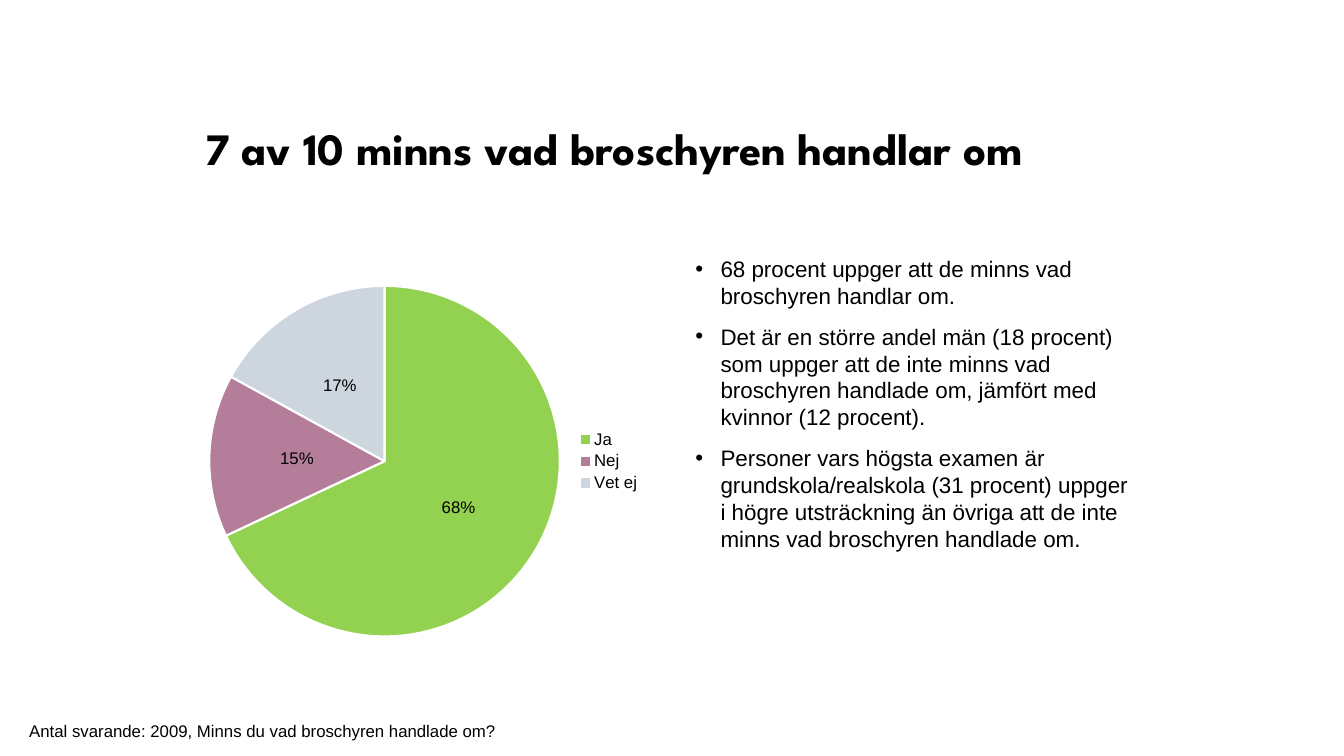
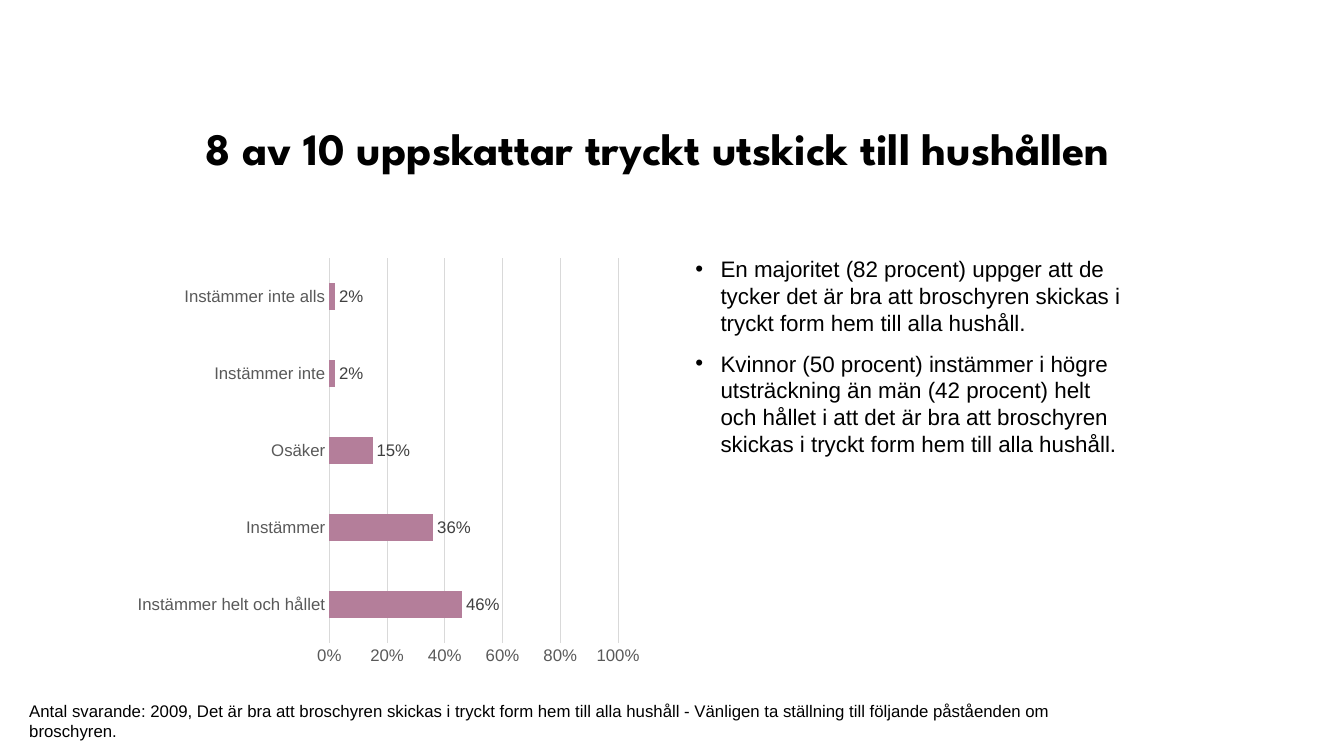
from lxml.etree import SubElement
from pptx import Presentation
from pptx.chart.data import CategoryChartData
from pptx.dml.color import RGBColor
from pptx.enum.chart import XL_CHART_TYPE, XL_LABEL_POSITION, XL_LEGEND_POSITION, XL_TICK_MARK
from pptx.enum.text import MSO_ANCHOR, MSO_AUTO_SIZE
from pptx.oxml import parse_xml
from pptx.oxml.ns import nsdecls, qn
from pptx.util import Pt

TITLE_FONT, BODY_FONT = "League Spartan", "Arial"
BLACK, WHITE, GREEN, MAUVE, PALE = "000000", "FFFFFF", "93D150", "B47E9A", "CDD5DE"
AXIS_GREY, LABEL_GREY, GRID_GREY = "595959", "404040", "D9D9D9"

# Boxes: left, top, width, height in points
TITLE_BOX = (139.7, 87.1, 675.4, 76.3)
BODY_BOX = (489.6, 178.6, 325.4, 301.7)
PIE_BOX = (139.7, 178.6, 325.4, 301.7)
BAR_BOX = (91.4, 178.6, 373.7, 301.7)
FOOTER_LEFT, FOOTER_BOTTOM, FOOTER_LINE = 20.9, 529, 14.4


def color(value):
    return RGBColor.from_string(value)


def style_font(font, size, value=BLACK, name=BODY_FONT, bold=False):
    font.name, font.size, font.bold = name, Pt(size), bold
    font.color.rgb = color(value)


def add_text(slide, box, paragraphs, size, name=BODY_FONT, bold=False):
    shape = slide.shapes.add_textbox(*map(Pt, box))
    text_frame = shape.text_frame
    text_frame.word_wrap = True
    text_frame.vertical_anchor = MSO_ANCHOR.TOP
    text_frame.text = "\n".join(paragraphs)
    for paragraph in text_frame.paragraphs:
        for run in paragraph.runs:
            style_font(run.font, size, BLACK, name, bold)
    return text_frame


def add_title(slide, box, title):
    text_frame = add_text(slide, box, [title], 32, TITLE_FONT, True)
    text_frame.paragraphs[0].line_spacing = 0.9


def add_bullets(slide, box, bullets):
    text_frame = add_text(slide, box, bullets, 16)
    for index, paragraph in enumerate(text_frame.paragraphs):
        paragraph.line_spacing = Pt(19.2)
        paragraph.space_before = Pt(10 if index else 0)
        properties = paragraph._p.get_or_add_pPr()
        properties.set("marL", str(Pt(18)))
        properties.set("indent", str(-Pt(18)))
        SubElement(properties, qn("a:buFont")).set("typeface", BODY_FONT)
        SubElement(properties, qn("a:buChar")).set("char", "•")


def add_footer(slide, width, note, lines):
    height = lines * FOOTER_LINE
    box = (FOOTER_LEFT, FOOTER_BOTTOM - height, width, height)
    text_frame = add_text(slide, box, [note], 12)
    text_frame.margin_left = text_frame.margin_right = 0
    text_frame.margin_top = text_frame.margin_bottom = 0
    text_frame.auto_size = MSO_AUTO_SIZE.SHAPE_TO_FIT_TEXT


def add_chart(slide, box, kind, values, plot_box, label_position, label_color):
    """Add a one-series percent chart; plot_box holds fractions of the chart box."""
    data = CategoryChartData(number_format="0%")
    data.categories = list(values)
    data.add_series("Series 1", list(values.values()))
    chart = slide.shapes.add_chart(kind, *map(Pt, box), data).chart
    chart.has_title = chart.has_legend = False
    style_font(chart.font, 10)

    # Plot area
    plot_area = chart._chartSpace.chart.plotArea
    for layout in plot_area.findall(qn("c:layout")):
        plot_area.remove(layout)
    sizes = "".join(f'<c:{key} val="{part}"/>' for key, part in zip("xywh", plot_box))
    plot_area.insert(0, parse_xml(
        f'<c:layout {nsdecls("c")}><c:manualLayout><c:layoutTarget val="inner"/>'
        f'<c:xMode val="edge"/><c:yMode val="edge"/>{sizes}</c:manualLayout></c:layout>'))

    # Data labels
    plot = chart.plots[0]
    plot.has_data_labels = True
    labels = plot.data_labels
    labels.show_value, labels.show_percentage = True, False
    labels.number_format, labels.number_format_is_linked = "0%", False
    labels.position = label_position
    style_font(labels.font, 12, label_color)
    return chart


def add_pie(slide, box, values, colors):
    chart = add_chart(slide, box, XL_CHART_TYPE.PIE, values, (0.03, 0.085, 0.77, 0.83),
                      XL_LABEL_POSITION.CENTER, BLACK)
    for index, value in enumerate(colors):
        piece = chart.plots[0].series[0].points[index].format
        piece.fill.solid()
        piece.fill.fore_color.rgb = color(value)
        piece.line.color.rgb = color(WHITE)
        piece.line.width = Pt(1.5)
    chart.has_legend = True
    chart.legend.position = XL_LEGEND_POSITION.RIGHT
    chart.legend.include_in_layout = False
    style_font(chart.legend.font, 12)


def add_bars(slide, box, values):
    chart = add_chart(slide, box, XL_CHART_TYPE.BAR_CLUSTERED, values,
                      (0.385, 0.02, 0.552, 0.91), XL_LABEL_POSITION.OUTSIDE_END, LABEL_GREY)
    plot = chart.plots[0]
    plot.gap_width, plot.vary_by_categories = 182, False
    fill = plot.series[0].format.fill
    fill.solid()
    fill.fore_color.rgb = color(MAUVE)

    # Axes
    category_axis, value_axis = chart.category_axis, chart.value_axis
    for axis in (category_axis, value_axis):
        axis.major_tick_mark = axis.minor_tick_mark = XL_TICK_MARK.NONE
        style_font(axis.tick_labels.font, 12, AXIS_GREY)
    value_axis.minimum_scale, value_axis.maximum_scale, value_axis.major_unit = 0, 1, 0.2
    value_axis.tick_labels.number_format = "0%"
    value_axis.tick_labels.number_format_is_linked = False
    value_axis.format.line.fill.background()
    value_axis.has_major_gridlines = True
    category_axis.has_major_gridlines = False
    for line in (category_axis.format.line, value_axis.major_gridlines.format.line):
        line.color.rgb = color(GRID_GREY)
        line.width = Pt(0.75)


def add_result_slide(presentation, title, bullets):
    slide = presentation.slides.add_slide(presentation.slide_layouts[6])
    add_title(slide, TITLE_BOX, title)
    add_bullets(slide, BODY_BOX, bullets)
    return slide


def main():
    presentation = Presentation()
    presentation.slide_width, presentation.slide_height = Pt(960), Pt(540)

    # Recall of the brochure
    slide = add_result_slide(presentation, "7 av 10 minns vad broschyren handlar om", [
        "68 procent uppger att de minns vad broschyren handlar om.",
        "Det är en större andel män (18 procent) som uppger att de inte minns vad "
        "broschyren handlade om, jämfört med kvinnor (12 procent).",
        "Personer vars högsta examen är grundskola/realskola (31 procent) uppger i högre "
        "utsträckning än övriga att de inte minns vad broschyren handlade om.",
    ])
    add_pie(slide, PIE_BOX, {"Ja": 0.68, "Nej": 0.15, "Vet ej": 0.17}, (GREEN, MAUVE, PALE))
    add_footer(slide, 795, "Antal svarande: 2009, Minns du vad broschyren handlade om?", 1)

    # Opinion of the printed mailing
    slide = add_result_slide(presentation, "8 av 10 uppskattar tryckt utskick till hushållen", [
        "En majoritet (82 procent) uppger att de tycker det är bra att broschyren skickas i "
        "tryckt form hem till alla hushåll.",
        "Kvinnor (50 procent) instämmer i högre utsträckning än män (42 procent) helt och "
        "hållet i att det är bra att broschyren skickas i tryckt form hem till alla hushåll.",
    ])
    add_bars(slide, BAR_BOX, {
        "Instämmer helt och hållet": 0.46, "Instämmer": 0.36, "Osäker": 0.15,
        "Instämmer inte": 0.02, "Instämmer inte alls": 0.02,
    })
    add_footer(slide, 780.5, "Antal svarande: 2009, Det är bra att broschyren skickas i tryckt "
               "form hem till alla hushåll - Vänligen ta ställning till följande påståenden om "
               "broschyren.", 2)

    presentation.save("out.pptx")


if __name__ == "__main__":
    main()
